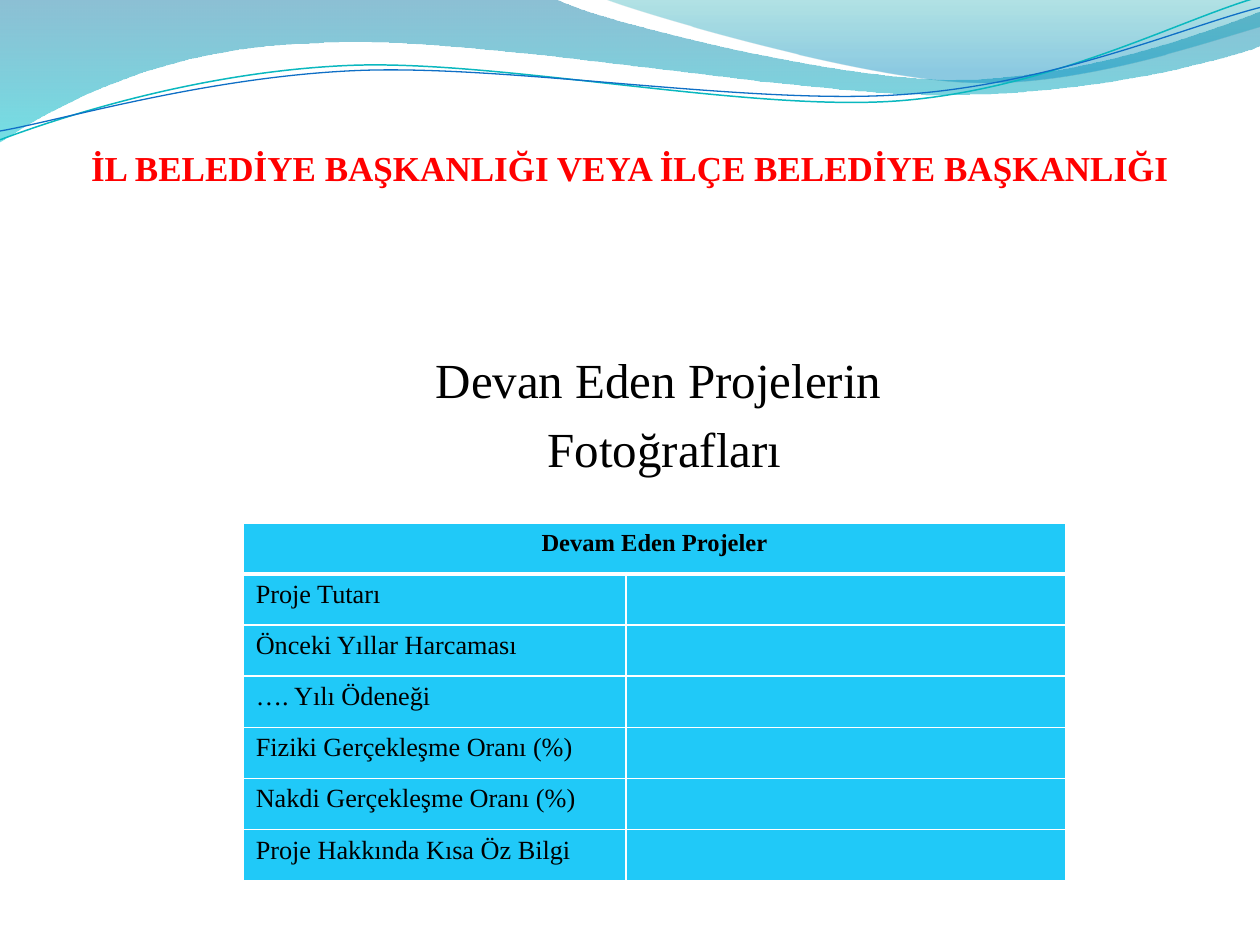
import dataclasses
import math

import pptx
import pptx.dml.color
import pptx.enum.text
import pptx.oxml.ns
import pptx.util
from lxml import etree

Inches = pptx.util.Inches
Pt = pptx.util.Pt
Point = tuple[float, float]
qn = pptx.oxml.ns.qn

FONT = "Times New Roman"
UNITS = 1000  # outline units to the inch
COLORS = {
    "title": "FF0000",
    "text": "000000",
    "cell": "20C9F8",
    "border": "FFFFFF",
    "band_top": "0074A1",
    "band_end": "00C6CF",
    "crest_top": "00A1A9",
    "crest_end": "008BBF",
    "teal_line": "0AB8BF",
    "blue_line": "0F6FC6",
}
LABELS = ["Proje Tutarı", "Önceki Yıllar Harcaması", "…. Yılı Ödeneği",
          "Fiziki Gerçekleşme Oranı (%)", "Nakdi Gerçekleşme Oranı (%)",
          "Proje Hakkında Kısa Öz Bilgi"]


@dataclasses.dataclass
class Stop:
    position: float
    color: str
    opacity: int


@dataclasses.dataclass
class Wave:
    """A start point, then steps of one point (line) or three (curve)."""
    start: Point
    steps: list[tuple[Point, ...]]
    stops: tuple[Stop, ...] = ()
    line: str = ""
    width: float = 0
    tilt: float = 0
    center: Point = (0, 0)


WAVES = [
    Wave((-0.01, -0.01),
         [((4.4, -0.01),),
          ((4.76, 0.17), (6.64, 0.63), (7.58, 0.63)),
          ((8.53, 0.63), (9.58, 0.26), (10, 0.09)),
          ((10.01, 0.36),),
          ((9.83, 0.44), (8.7, 0.76), (7.46, 0.75)),
          ((6.22, 0.75), (3.82, 0.28), (2.57, 0.34)),
          ((1.29, 0.36), (0.46, 0.83), (-0.01, 1.13))],
         stops=(Stop(0, "band_top", 45), Stop(1, "band_end", 55))),
    Wave((4.79, -0.01),
         [((5.09, 0.11), (6.82, 0.62), (7.69, 0.65)),
          ((8.56, 0.69), (9.61, 0.32), (10, 0.21)),
          ((10, 0),)],
         stops=(Stop(0, "crest_top", 30), Stop(0.8, "crest_end", 45))),
    Wave((0, 1.11),
         [((0.48, 0.93), (1.58, 0.57), (2.77, 0.52)),
          ((3.95, 0.47), (5.93, 0.89), (7.13, 0.8)),
          ((8.33, 0.71), (9.38, 0.15), (9.98, -0.02))],
         line="teal_line", width=0.85, tilt=-2.7, center=(4.99, 0.58)),
    Wave((0, 1.04),
         [((0.47, 0.96), (1.64, 0.61), (2.83, 0.56)),
          ((4.03, 0.51), (5.97, 0.84), (7.17, 0.75)),
          ((8.36, 0.67), (9.41, 0.21), (10, 0.06))],
         line="blue_line", width=0.75, tilt=-2.7, center=(5, 0.59)),
]


def rgb(name: str) -> pptx.dml.color.RGBColor:
    return pptx.dml.color.RGBColor.from_string(COLORS[name])


def outline_point(wave: Wave, point: Point) -> Point:
    """The point in outline units, with the wave's tilt taken out."""
    angle = math.radians(-wave.tilt)
    across, down = point[0] - wave.center[0], point[1] - wave.center[1]
    x = wave.center[0] + across * math.cos(angle) - down * math.sin(angle)
    y = wave.center[1] + across * math.sin(angle) + down * math.cos(angle)
    return x * UNITS, y * UNITS


def bend(shape, steps: list[tuple[Point, ...]]) -> None:
    """Turn each run of three line segments into one curve."""
    segments = iter(list(shape._element.iter(qn("a:lnTo"))))
    for step in steps:
        lines = [next(segments) for _ in step]
        if len(step) == 3:
            curve = etree.Element(qn("a:cubicBezTo"))
            lines[0].addprevious(curve)
            for line in lines:
                curve.append(line[0])
                line.getparent().remove(line)


def draw_wave(page, wave: Wave) -> None:
    points = [outline_point(wave, point) for step in wave.steps for point in step]
    builder = page.shapes.build_freeform(*outline_point(wave, wave.start),
                                         scale=Inches(1) / UNITS)
    builder.add_line_segments(points, close=bool(wave.stops))
    shape = builder.convert_to_shape()
    bend(shape, wave.steps)
    shape.rotation = wave.tilt
    shape.shadow.inherit = False
    if not wave.stops:
        shape.fill.background()
        shape.line.color.rgb = rgb(wave.line)
        shape.line.width = Pt(wave.width)
        return
    shape.line.fill.background()
    shape.fill.gradient()
    shape.fill.gradient_angle = 270
    for target, stop in zip(shape.fill.gradient_stops, wave.stops):
        target.position = stop.position
        target.color.rgb = rgb(stop.color)
    for color, stop in zip(shape._element.spPr.iter(qn("a:srgbClr")), wave.stops):
        etree.SubElement(color, qn("a:alpha"), val=str(stop.opacity * 1000))


def format_text(para, size: float, color: str = "text", bold: bool = False,
                align=pptx.enum.text.PP_ALIGN.CENTER) -> None:
    para.alignment = align
    para.font.name = FONT
    para.font.size = Pt(size)
    para.font.bold = bold
    para.font.color.rgb = rgb(color)


def place(box, left: float, top: float, width: float, height: float) -> None:
    box.left, box.top = Inches(left), Inches(top)
    box.width, box.height = Inches(width), Inches(height)
    box.text_frame.word_wrap = True
    box.text_frame.auto_size = pptx.enum.text.MSO_AUTO_SIZE.NONE
    box.text_frame.vertical_anchor = pptx.enum.text.MSO_ANCHOR.MIDDLE


def style_cell(cell, top: float = 1, bottom: float = 1) -> None:
    properties = cell._tc.get_or_add_tcPr()
    for side, width in (("L", 1), ("R", 1), ("T", top), ("B", bottom)):
        line = etree.SubElement(properties, qn(f"a:ln{side}"), w=str(Pt(width)))
        fill = etree.SubElement(line, qn("a:solidFill"))
        etree.SubElement(fill, qn("a:srgbClr"), val=COLORS["border"])
    cell.fill.solid()
    cell.fill.fore_color.rgb = rgb("cell")


def add_project_table(page) -> None:
    count = len(LABELS) + 1
    table = page.shapes.add_table(count, 2, Inches(1.93), Inches(4.15),
                                  Inches(6.53), Inches(2.84)).table
    for column, width in zip(table.columns, (3.04, 3.49)):
        column.width = Inches(width)
    for index in range(count):
        for cell in table.rows[index].cells:
            style_cell(cell, top=3 if index == 1 else 1, bottom=3 if index == 0 else 1)
    header = table.cell(0, 0)
    header.merge(table.cell(0, 1))
    header.text = "Devam Eden Projeler"
    format_text(header.text_frame.paragraphs[0], 14, bold=True)
    for index, label in enumerate(LABELS, start=1):
        cell = table.cell(index, 0)
        cell.text = label
        format_text(cell.text_frame.paragraphs[0], 15,
                    align=pptx.enum.text.PP_ALIGN.LEFT)


def main() -> None:
    deck = pptx.Presentation()
    deck.slide_width, deck.slide_height = Inches(10), Inches(7.5)
    page = deck.slides.add_slide(deck.slide_layouts[1])

    # Wave decoration
    for wave in WAVES:
        draw_wave(page, wave)

    # Title
    title = page.shapes.title
    place(title, 0, 0.99, 10, 0.63)
    frame = title.text_frame
    frame.margin_left = frame.margin_right = frame.margin_bottom = 0
    frame.text = "İL BELEDİYE BAŞKANLIĞI VEYA İLÇE BELEDİYE BAŞKANLIĞI"
    format_text(frame.paragraphs[0], 20, "title", bold=True)

    # Project table
    add_project_table(page)

    # Photo caption
    body = page.placeholders[1]
    place(body, 2.01, 2.18, 6.53, 2.65)
    body.text_frame.margin_bottom = Inches(0.5)
    body.text_frame.text = "Devan Eden Projelerin \nFotoğrafları"
    for para in body.text_frame.paragraphs:
        format_text(para, 28)
        properties = para._p.get_or_add_pPr()
        properties.set("marL", "0")
        properties.set("indent", "0")
        properties.insert_element_before(
            etree.SubElement(properties, qn("a:buNone")), "a:defRPr")

    deck.save("out.pptx")


if __name__ == "__main__":
    main()
